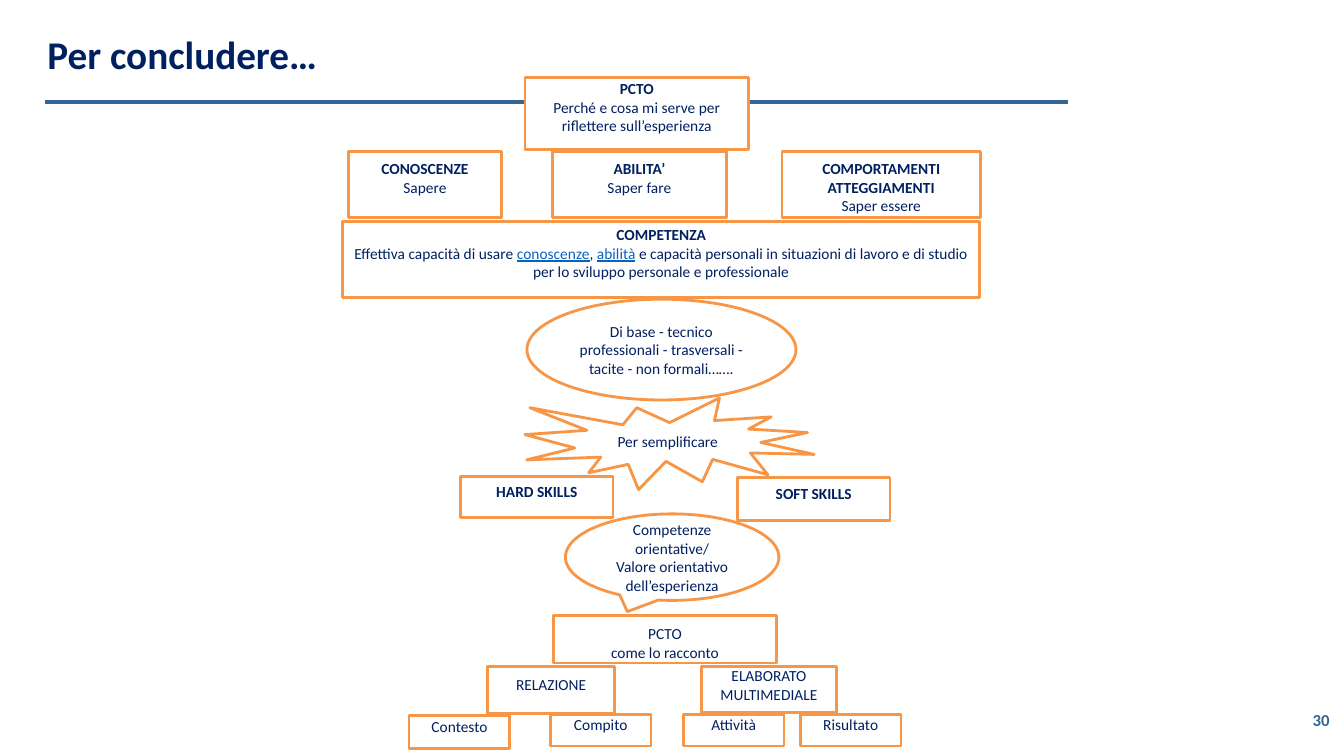
from dataclasses import dataclass

from lxml import etree
from pptx import Presentation
from pptx.dml.color import RGBColor
from pptx.enum.shapes import MSO_CONNECTOR, MSO_SHAPE
from pptx.enum.text import MSO_ANCHOR, PP_ALIGN
from pptx.oxml.ns import qn
from pptx.slide import Slide
from pptx.text.text import TextFrame
from pptx.util import Cm, Pt

RECT = MSO_SHAPE.RECTANGLE
OVAL = MSO_SHAPE.OVAL
BURST = MSO_SHAPE.EXPLOSION1
CALLOUT = MSO_SHAPE.OVAL_CALLOUT
STRAIGHT = MSO_CONNECTOR.STRAIGHT
TOP, MIDDLE = MSO_ANCHOR.TOP, MSO_ANCHOR.MIDDLE
LEFT, CENTER, RIGHT = PP_ALIGN.LEFT, PP_ALIGN.CENTER, PP_ALIGN.RIGHT

COLORS = {"navy": "002060", "orange": "F79646", "blue": "336699",
          "link": "0563C1", "white": "FFFFFF"}
FORMATS = {
    "title": {"size": Pt(28), "bold": True},
    "number": {"size": Pt(12), "bold": True},
    "heading": {"size": Pt(11), "bold": True},
    "body": {"size": Pt(11), "bold": False},
    "term": {"size": Pt(11), "bold": False, "underline": True},
}
TEXT_COLORS = {"number": "blue", "term": "link"}


@dataclass(frozen=True)
class Words:
    text: str
    style: str = "body"


Line = tuple[Words, ...]


@dataclass(frozen=True)
class Step:
    left: float
    top: float
    width: float
    height: float
    lines: tuple[Line, ...]
    text_top: float | None = None
    outline: MSO_SHAPE = RECT
    adjustments: tuple[float, ...] = ()


def body(text: str) -> Line:
    return (Words(text),)


def heading(text: str) -> Line:
    return (Words(text, "heading"),)


COMPETENCE = (
    Words("Effettiva capacità di usare "),
    Words("conoscenze", "term"),
    Words(", "),
    Words("abilità", "term"),
    Words(" e capacità personali in situazioni di lavoro e di studio "
          "per lo sviluppo personale e professionale"),
)

STEPS = (
    Step(12.29, 16.79, 3.2, 1.19, (body("RELAZIONE"),), 0.21),
    Step(20.17, 18.01, 2.54, 0.79, (body("Risultato"),), 0),
    Step(13.92, 3.81, 4.39, 1.68, (heading("ABILITA’"), body("Saper fare")), 0.21),
    Step(8.79, 3.81, 3.84, 1.68, (heading("CONOSCENZE"), body("Sapere")), 0.21),
    Step(13.23, 1.96, 5.64, 1.8,
         (heading("PCTO"), body("Perché e cosa mi serve per riflettere sull’esperienza")), 0.04),
    Step(19.71, 3.81, 5, 1.68,
         (heading("COMPORTAMENTI"), heading("ATTEGGIAMENTI"), body("Saper essere")), 0.21),
    Step(17.68, 16.79, 3.4, 1.17, (body("ELABORATO MULTIMEDIALE"),), 0),
    Step(8.64, 5.59, 16.05, 1.91, (heading("COMPETENZA"), COMPETENCE), 0.09),
    Step(17.22, 18.01, 2.54, 0.79, (body("Attività"),), 0),
    Step(13.87, 18.01, 2.54, 0.79, (body("Compito"),), 0),
    Step(10.31, 18.03, 2.54, 0.84, (body("Contesto"),), 0.03),
    Step(13.94, 15.52, 5.64, 1.19, (body("PCTO"), body("come lo racconto")), 0.21),
    Step(11.61, 12.01, 3.84, 1.04, (heading("HARD SKILLS"),), 0.13),
    Step(18.59, 12.04, 3.84, 1.07, (heading("SOFT SKILLS"),), 0.15),
    Step(13.28, 7.54, 6.78, 2.54,
         (body("Di base - tecnico professionali - trasversali - tacite - non formali……."),),
         outline=OVAL),
    Step(13.23, 10.03, 7.29, 2.31, (body("Per semplificare"),), outline=BURST),
    Step(14.25, 12.95, 5.38, 2.18,
         (body("Competenze orientative/"), body("Valore orientativo dell’esperienza")),
         outline=CALLOUT, adjustments=(-0.21, 0.63)),
)


def color(name: str) -> RGBColor:
    return RGBColor.from_string(COLORS[name])


def write(frame: TextFrame, lines: tuple[Line, ...], alignment: PP_ALIGN,
          text_top: float | None = None) -> None:
    frame.word_wrap = True
    frame.vertical_anchor = MIDDLE
    if text_top is not None:
        frame.vertical_anchor = TOP
        frame.margin_top, frame.margin_bottom = Cm(text_top), Cm(0)
    for index, line in enumerate(lines):
        paragraph = frame.add_paragraph() if index else frame.paragraphs[0]
        paragraph.alignment = alignment
        for words in line:
            run = paragraph.add_run()
            run.text = words.text
            run.font.name = "Calibri"
            run.font.color.rgb = color(TEXT_COLORS.get(words.style, "navy"))
            for attribute, value in FORMATS[words.style].items():
                setattr(run.font, attribute, value)


def add_header(slide: Slide) -> None:
    title = slide.shapes.title
    title.left, title.top, title.width, title.height = Cm(0.94), Cm(0.43), Cm(31.7), Cm(2.01)
    write(title.text_frame, ((Words("Per concludere…", "title"),),), LEFT)
    title.text_frame.paragraphs[0].line_spacing = 0.9

    rule = slide.shapes.add_connector(STRAIGHT, Cm(1.14), Cm(2.57), Cm(26.92), Cm(2.57))
    rule.line.color.rgb = color("blue")
    rule.line.width = Pt(2.25)
    etree.SubElement(rule._element.spPr, qn("a:effectLst"))

    number = slide.shapes.add_textbox(Cm(26.14), Cm(17.63), Cm(7.62), Cm(1.02))
    write(number.text_frame, ((Words("30", "number"),),), RIGHT)


def add_step(slide: Slide, step: Step) -> None:
    box = slide.shapes.add_shape(step.outline, Cm(step.left), Cm(step.top),
                                 Cm(step.width), Cm(step.height))
    for index, value in enumerate(step.adjustments):
        box.adjustments[index] = value
    box.shadow.inherit = False
    box.fill.solid()
    box.fill.fore_color.rgb = color("white")
    box.line.color.rgb = color("orange")
    box.line.width = Pt(2)
    write(box.text_frame, step.lines, CENTER, step.text_top)


def main() -> None:
    presentation = Presentation()
    presentation.slide_width, presentation.slide_height = Cm(33.87), Cm(19.05)
    slide = presentation.slides.add_slide(presentation.slide_layouts[5])
    add_header(slide)
    for step in STEPS:
        add_step(slide, step)
    presentation.save("out.pptx")


if __name__ == "__main__":
    main()
